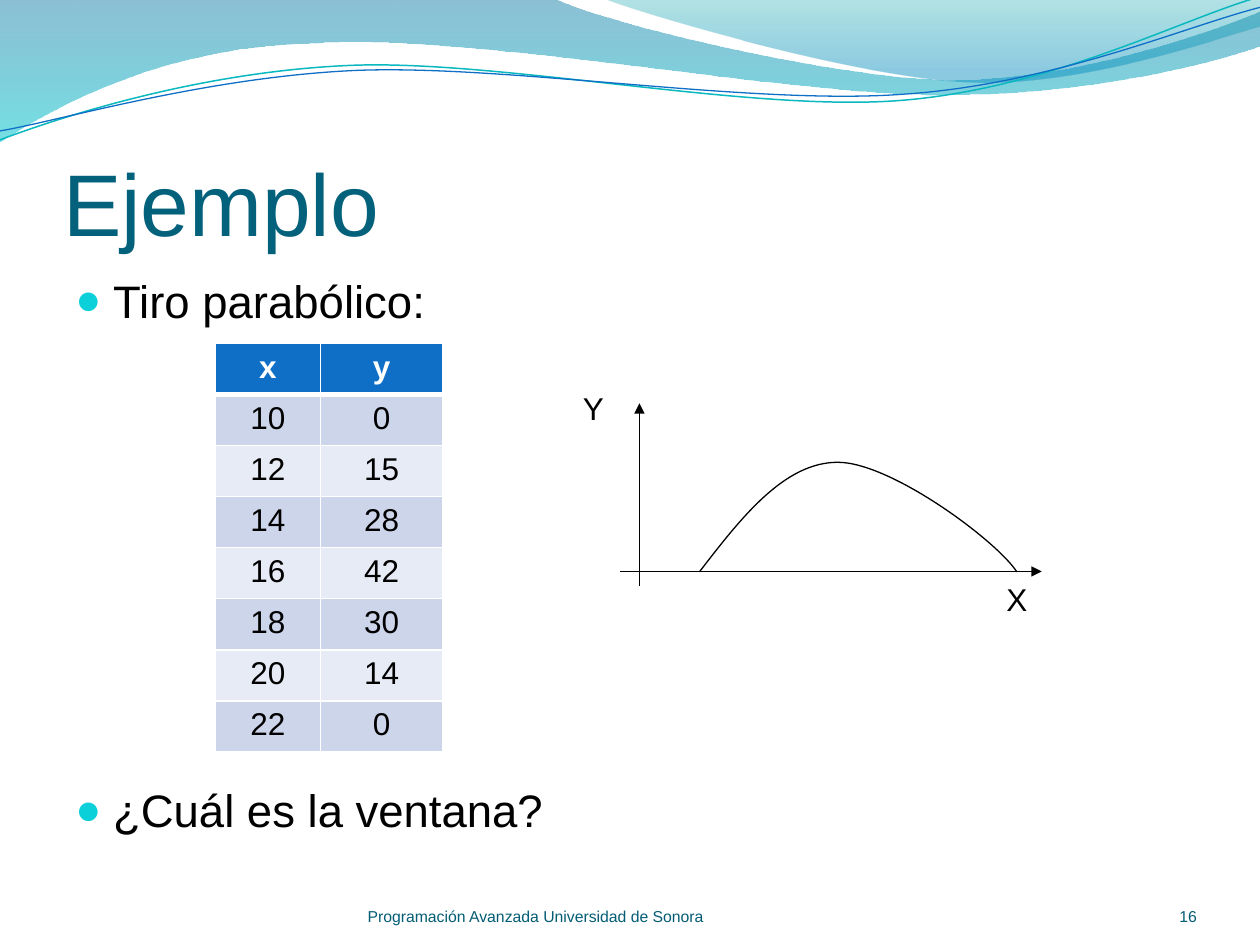
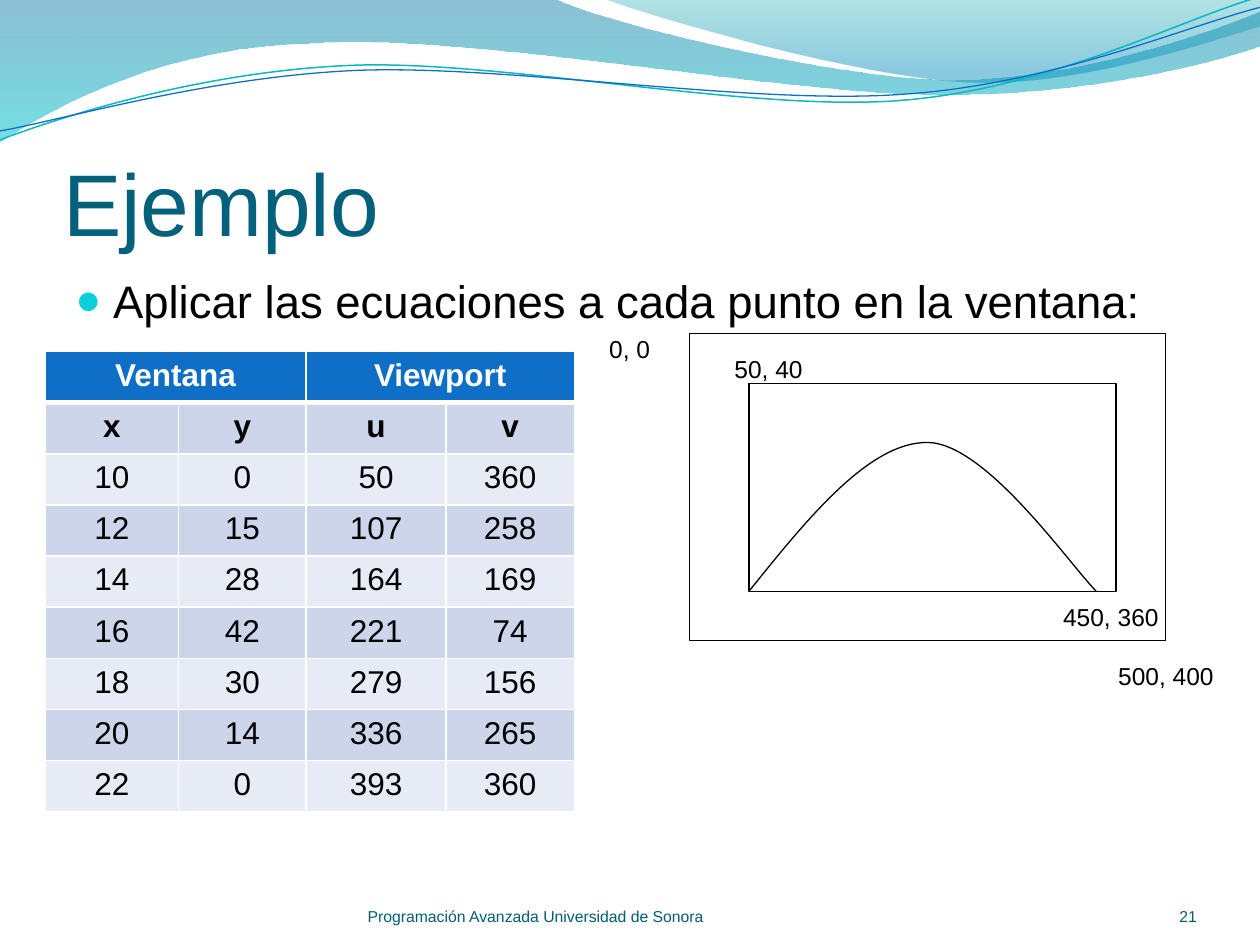
"""Build two slides on mapping a parabolic shot from a window to a viewport."""
from pptx import Presentation
from pptx.dml.color import RGBColor
from pptx.enum.shapes import MSO_CONNECTOR as CONN, MSO_SHAPE as SHAPE
from pptx.enum.text import MSO_ANCHOR as ANCHOR, MSO_AUTO_SIZE as AUTO, PP_ALIGN as ALIGN
from pptx.oxml import parse_xml
from pptx.oxml.ns import nsdecls, qn
from pptx.util import Cm, Pt

COLORS = {k: RGBColor.from_string(v) for k, v in {
    "title": "04617B", "footer": "045D75", "bullet": "0BD0D9", "text": "000000",
    "white": "FFFFFF", "header": "0F6FC6", "odd": "CCD5EA", "even": "E7EBF5",
    "sea_top": "0074A1", "sea_low": "00C6CF", "sky_top": "00A1A9", "sky_low": "008BBF",
    "teal": "0AB8BF", "blue": "0F6FC6",
}.items()}
ZERO = {"margin_left": 0, "margin_top": 0, "margin_right": 0, "margin_bottom": 0}
FOOT = {**ZERO, "vertical_anchor": ANCHOR.BOTTOM, "word_wrap": True}
TITLE = {**FOOT, "margin_top": Cm(0.13), "auto_size": AUTO.NONE}
MIDDLE = {**ZERO, "vertical_anchor": ANCHOR.MIDDLE, "word_wrap": False}
ROW_H = 1.03

prs = Presentation()
prs.slide_width, prs.slide_height = Cm(25.4), Cm(19.05)
layout = prs.slide_layouts[5]


def write(tf, text, size, color="text", align=ALIGN.LEFT, bold=False, frame=None):
    for name, value in (frame or {}).items():
        setattr(tf, name, value)
    p = tf.paragraphs[0] if not tf.text else tf.add_paragraph()
    p.alignment = align
    r = p.add_run()
    r.text = text
    for name, value in {"name": "Arial", "size": Pt(size), "bold": bold}.items():
        setattr(r.font, name, value)
    r.font.color.rgb = COLORS[color]
    return p


def curve(s, start, segments, color="text", width=0.75, close=False):
    builder = s.shapes.build_freeform(Cm(start[0]), Cm(start[1]))
    for seg in segments:
        pairs = zip(seg[::2], seg[1::2])
        builder.add_line_segments([(Cm(x), Cm(y)) for x, y in pairs], close=False)
    if close:
        builder.add_line_segments([], close=True)
    sp = builder.convert_to_shape()
    lines = iter(list(sp.element.iter(qn("a:lnTo"))))
    for seg in segments:
        group = [next(lines) for _ in range(len(seg) // 2)]
        if len(group) == 3:
            bezier = parse_xml(f'<a:cubicBezTo {nsdecls("a")}/>')
            group[0].addprevious(bezier)
            for line in group:
                bezier.append(line[0])
                line.getparent().remove(line)
    sp.shadow.inherit = False
    sp.fill.background()
    if close:
        sp.line.fill.background()
    else:
        sp.line.color.rgb, sp.line.width = COLORS[color], Pt(width)
    return sp


slides = [prs.slides.add_slide(layout) for _ in range(2)]
s1, s2 = slides

bands = [
    ((0, 0), [(11.18, -0.03), (12.09, 0.43, 16.87, 1.6, 19.25, 1.6),
              (21.67, 1.6, 24.33, 0.66, 25.4, 0.23), (25.43, 0.91),
              (24.97, 1.12, 22.1, 1.93, 18.95, 1.91), (15.8, 1.91, 9.7, 0.71, 6.53, 0.86),
              (3.28, 0.91, 1.17, 2.11, -0.03, 2.87)],
     [("sea_top", 0, 45), ("sea_low", 1, 55)]),
    ((12.17, -0.03), [(12.93, 0.28, 17.32, 1.57, 19.53, 1.65),
                      (21.74, 1.75, 24.41, 0.81, 25.4, 0.53), (25.4, 0)],
     [("sky_top", 0, 30), ("sky_low", 0.8, 45)]),
]
waves = []
for start, segments, stops in bands:
    sp = curve(s1, start, segments, close=True)
    sp.fill.gradient()
    sp.fill.gradient_angle = 270
    for stop, (color, position, _) in zip(sp.fill.gradient_stops, stops):
        stop.color.rgb, stop.position = COLORS[color], position
    for clr, (_, _, alpha) in zip(sp.element.iter(qn("a:srgbClr")), stops):
        clr.append(parse_xml(f'<a:alpha {nsdecls("a")} val="{alpha * 1000}"/>'))
    waves.append(sp)
waves.append(curve(s1, (0, 2.82), [(1.22, 2.36, 4.01, 1.45, 7.04, 1.32),
                                   (10.03, 1.19, 15.06, 2.26, 18.11, 2.03),
                                   (21.16, 1.8, 23.83, 0.38, 25.35, -0.05)], "teal", 0.85))
waves.append(curve(s1, (0, 2.64), [(1.19, 2.44, 4.17, 1.55, 7.19, 1.42),
                                   (10.24, 1.3, 15.16, 2.13, 18.21, 1.9),
                                   (21.23, 1.7, 23.9, 0.53, 25.4, 0.15)], "blue"))
for sp in waves:
    layout.shapes.element.append(sp.element)

points = [(10, 0), (12, 15), (14, 28), (16, 42), (18, 30), (20, 14), (22, 0)]
mapped = [(50, 360), (107, 258), (164, 169), (221, 74), (279, 156), (336, 265), (393, 360)]
content = [
    (s1, "16", ["Tiro parabólico:", "¿Cuál es la ventana?"],
     (4.34, 6.92), (2.12, 2.47), [("x", "y")] + points, 1),
    (s2, "21", ["Aplicar las ecuaciones a cada punto en la ventana:"],
     (0.91, 7.09), (2.69, 2.57, 2.82, 2.59),
     [("Ventana", "", "Viewport", ""), ("x", "y", "u", "v")]
     + [a + b for a, b in zip(points, mapped)], 2),
]
for s, number, bullets, (left, top), widths, rows, bold_rows in content:
    title = s.shapes.title
    for name, value in {"left": 1.27, "top": 1.94, "width": 22.86, "height": 3.18}.items():
        setattr(title, name, Cm(value))
    write(title.text_frame, "Ejemplo", 50, "title", frame=TITLE)

    body = s.shapes.add_textbox(Cm(1.27), Cm(5.37), Cm(22.86), Cm(12.19)).text_frame
    for i, text in enumerate(bullets):
        p = write(body, text, 26, frame={"word_wrap": True})
        p.space_before = Pt(260 * i)
        pPr = p._p.get_or_add_pPr()
        pPr.set("marL", str(Cm(0.76)))
        pPr.set("indent", str(Cm(-0.76)))
        for xml in (f'<a:buClr {nsdecls("a")}><a:srgbClr val="{COLORS["bullet"]}"/></a:buClr>',
                    f'<a:buSzPct {nsdecls("a")} val="95000"/>',
                    f'<a:buFont {nsdecls("a")} typeface="Arial"/>',
                    f'<a:buChar {nsdecls("a")} char="●"/>'):
            pPr.append(parse_xml(xml))

    for text, x, w, align in (("Programación Avanzada Universidad de Sonora", 7.41, 9.32, ALIGN.LEFT),
                              (number, 22.02, 2.11, ALIGN.RIGHT)):
        tb = s.shapes.add_textbox(Cm(x), Cm(17.65), Cm(w), Cm(1.02))
        write(tb.text_frame, text, 9, "footer", align, frame=FOOT)

    table = s.shapes.add_table(len(rows), len(widths), Cm(left), Cm(top),
                               Cm(sum(widths)), Cm(ROW_H * len(rows))).table
    table.horz_banding = False
    for col, w in zip(table.columns, widths):
        col.width = Cm(w)
    for i, row in enumerate(rows):
        table.rows[i].height = Cm(ROW_H)
        for j, value in enumerate(row):
            cell = table.cell(i, j)
            tcPr = cell._tc.get_or_add_tcPr()
            for side in "LRTB":
                thick = (i, side) in ((0, "B"), (1, "T"))
                tcPr.append(parse_xml(
                    f'<a:ln{side} {nsdecls("a")} w="{Pt(3 if thick else 1)}"><a:solidFill>'
                    f'<a:srgbClr val="{COLORS["white"]}"/></a:solidFill></a:ln{side}>'))
            cell.fill.solid()
            cell.fill.fore_color.rgb = COLORS["header" if i == 0 else "odd" if i % 2 else "even"]
            if value != "":
                write(cell.text_frame, str(value), 18, "text" if i else "white",
                      ALIGN.CENTER, i < bold_rows)
    if len(widths) == 4:
        for j in (0, 2):
            table.cell(0, j).merge(table.cell(0, j + 1))

for x1, y1, x2, y2 in ((12.5, 11.52, 21, 11.52), (12.89, 11.81, 12.89, 8.13)):
    axis = s1.shapes.add_connector(CONN.STRAIGHT, Cm(x1), Cm(y1), Cm(x2), Cm(y2))
    axis.line.color.rgb, axis.line.width = COLORS["text"], Pt(0.75)
    axis.element.find(".//" + qn("a:ln")).append(
        parse_xml(f'<a:tailEnd {nsdecls("a")} type="triangle"/>'))
    axis.element.find(qn("p:spPr")).append(parse_xml(f'<a:effectLst {nsdecls("a")}/>'))
curve(s1, (14.1, 11.53), [(14.96, 10.41, 15.82, 9.32, 16.89, 9.32),
                          (17.96, 9.32, 20.09, 10.9, 20.5, 11.53)])
for text, x, y in (("X", 20.04, 11.56), ("Y", 11.5, 7.72)):
    tb = s1.shapes.add_textbox(Cm(x), Cm(y), Cm(0.93), Cm(1.02))
    write(tb.text_frame, text, 18, frame={"word_wrap": False, "auto_size": AUTO.SHAPE_TO_FIT_TEXT})

for box in ((13.9, 6.73, 9.6, 6.19), (15.1, 7.73, 7.4, 4.19)):
    sp = s2.shapes.add_shape(SHAPE.RECTANGLE, *map(Cm, box))
    sp.shadow.inherit = False
    sp.fill.background()
    sp.line.color.rgb, sp.line.width = COLORS["text"], Pt(0.75)
curve(s2, (15.1, 11.92), [(16.31, 10.41, 17.53, 8.92, 18.69, 8.92),
                          (19.86, 8.92, 21.54, 11.35, 22.1, 11.92)])
for text, x, y, w in (("0, 0", 11.69, 6.32, 2.01), ("500, 400", 22.3, 12.93, 2.41),
                      ("50, 40", 14.49, 6.73, 2.01), ("450, 360", 21.29, 11.74, 2.21)):
    tb = s2.shapes.add_textbox(Cm(x), Cm(y), Cm(w), Cm(1.4))
    write(tb.text_frame, text, 14, align=ALIGN.CENTER, frame=MIDDLE)

prs.save("out.pptx")
